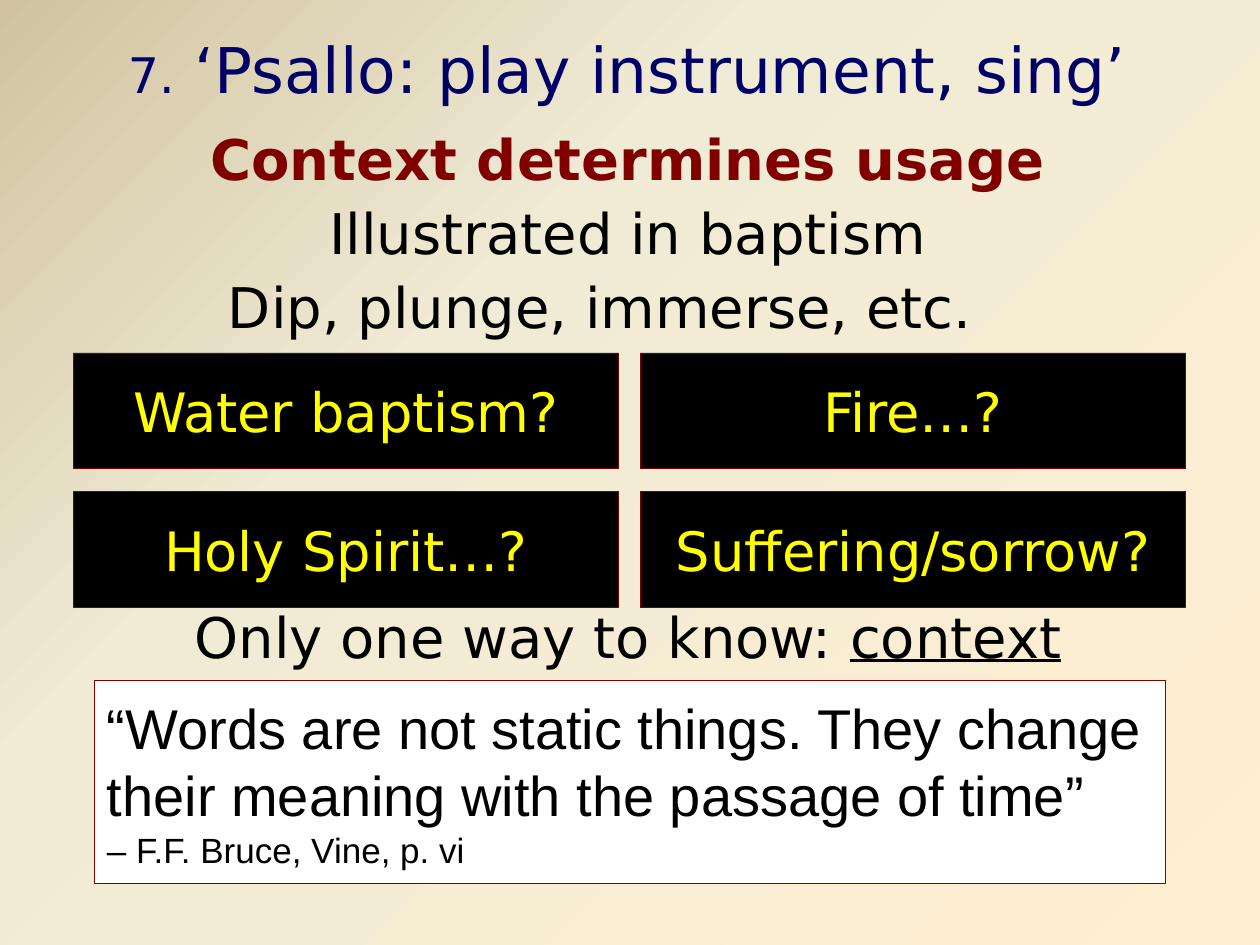
"""Builds the slide on how context decides the meaning of a word."""
import lxml.etree
import pptx
import pptx.dml.color
import pptx.enum.shapes
import pptx.enum.text
import pptx.oxml.ns
import pptx.util

Inches = pptx.util.Inches
Pt = pptx.util.Pt
qn = pptx.oxml.ns.qn
ALIGN = pptx.enum.text.PP_ALIGN
MIDDLE = pptx.enum.text.MSO_ANCHOR.MIDDLE

COLORS = {
    "sand": "D1C39F", "cream": "F0EBD5", "peach": "FFEFD1",
    "navy": "000066", "maroon": "800000", "black": "000000",
    "yellow": "FFFF00", "white": "FFFFFF",
}


class ContextSlide:
    """Holds the style and the current slide."""

    font = "DejaVu Sans"

    def __init__(self, presentation):
        """Adds a title and content slide."""
        self.slide = presentation.slides.add_slide(presentation.slide_layouts[1])

    def color(self, name):
        """Returns a named colour."""
        return pptx.dml.color.RGBColor.from_string(COLORS[name])

    def style(self, run, size, color, font=None, bold=False, underline=False):
        """Formats one run."""
        run.font.name = font or self.font
        run.font.size = Pt(size)
        run.font.bold = bold
        run.font.underline = underline
        run.font.color.rgb = self.color(color)

    def place(self, shape, left, top, width, height):
        """Moves and sizes a placeholder."""
        shape.left, shape.top = Inches(left), Inches(top)
        shape.width, shape.height = Inches(width), Inches(height)
        shape.text_frame.word_wrap = True
        shape.text_frame.auto_size = pptx.enum.text.MSO_AUTO_SIZE.NONE

    def background(self, stops, angle):
        """Fills the background with a linear gradient."""
        fill = self.slide.background.fill
        fill.gradient()
        gradient = self.slide.background._cSld.find(".//" + qn("a:gradFill"))
        stop_list = gradient.find(qn("a:gsLst"))
        for old_stop in list(stop_list):
            stop_list.remove(old_stop)
        for position, name in stops:
            stop = lxml.etree.SubElement(stop_list, qn("a:gs"), pos=str(position * 1000))
            lxml.etree.SubElement(stop, qn("a:srgbClr"), val=COLORS[name])
        gradient.find(qn("a:lin")).set("ang", str(angle * 60000))

    def title(self, number, heading, box):
        """Writes the numbered title."""
        title = self.slide.shapes.title
        self.place(title, *box)
        title.text_frame.vertical_anchor = MIDDLE
        paragraph = title.text_frame.paragraphs[0]
        paragraph.text = number
        paragraph.add_run().text = heading
        paragraph.alignment = ALIGN.CENTER
        for run, size in zip(paragraph.runs, (28, 36)):
            self.style(run, size, "navy")

    def body(self, lines, box):
        """Writes centred lines given as space before, right margin and runs."""
        body = self.slide.placeholders[1]
        self.place(body, *box)
        frame = body.text_frame
        frame.text = "\n".join("" for _ in lines)
        for paragraph, (space, margin, parts) in zip(frame.paragraphs, lines):
            properties = paragraph._p.get_or_add_pPr()
            properties.set("marL", "0")
            properties.set("indent", "0")
            properties.set("marR", str(Inches(margin)))
            lxml.etree.SubElement(properties, qn("a:buNone"))
            paragraph.alignment = ALIGN.CENTER
            paragraph.line_spacing = 0.9
            paragraph.space_before = Pt(space)
            for text, look in parts:
                run = paragraph.add_run()
                run.text = text
                self.style(run, 32, **look)

    def panel(self, text, box, fill, line_width, align, looks):
        """Draws a bordered rectangle with one look for each run."""
        panel = self.slide.shapes.add_shape(
            pptx.enum.shapes.MSO_SHAPE.RECTANGLE, *map(Inches, box))
        panel.shadow.inherit = False
        panel.fill.solid()
        panel.fill.fore_color.rgb = self.color(fill)
        panel.line.color.rgb = self.color("maroon")
        panel.line.width = Pt(line_width)
        frame = panel.text_frame
        frame.word_wrap = True
        frame.vertical_anchor = MIDDLE
        paragraph = frame.paragraphs[0]
        paragraph.text = text
        paragraph.alignment = align
        for run, look in zip(paragraph.runs, looks):
            self.style(run, **look)


def main():
    """Builds and saves the slide."""
    presentation = pptx.Presentation()
    presentation.slide_width, presentation.slide_height = Inches(10), Inches(7.5)
    page = ContextSlide(presentation)
    page.background([(0, "sand"), (35, "cream"), (100, "peach")], 45)
    page.title("7.", " ‘Psallo: play instrument, sing’", (0.48, 0.08, 9, 0.92))

    plain = {"color": "black"}
    page.body([
        (0, 0, [("Context determines usage", {"color": "maroon", "bold": True})]),
        (7.6, 0, [("Illustrated in baptism", plain)]),
        (7.6, 0.44, [("Dip, plunge, immerse, etc.", plain)]),
        (153.8, 0, [("Only one way to know: ", plain),
                    ("context", {"color": "black", "underline": True})]),
    ], (0.4, 1, 9.17, 6.42))

    baptisms = ["Water baptism?", "Fire…?", "Holy Spirit…?", "Suffering/sorrow?"]
    for index, baptism in enumerate(baptisms):
        row, column = divmod(index, 2)
        box = (0.58 + 4.5 * column, 2.8 + 1.1 * row, 4.33, 0.92)
        page.panel(baptism, box, "black", 0.25, ALIGN.CENTER,
                   [{"size": 31, "color": "yellow"}])

    quote = ("“Words are not static things. They change their meaning "
             "with the passage of time”\v– F.F. Bruce, Vine, p. vi")
    page.panel(quote, (0.75, 5.4, 8.5, 1.61), "white", 0.5, ALIGN.LEFT,
               [{"size": size, "color": "black", "font": "Arial"} for size in (32, 20)])
    presentation.save("out.pptx")


if __name__ == "__main__":
    main()
